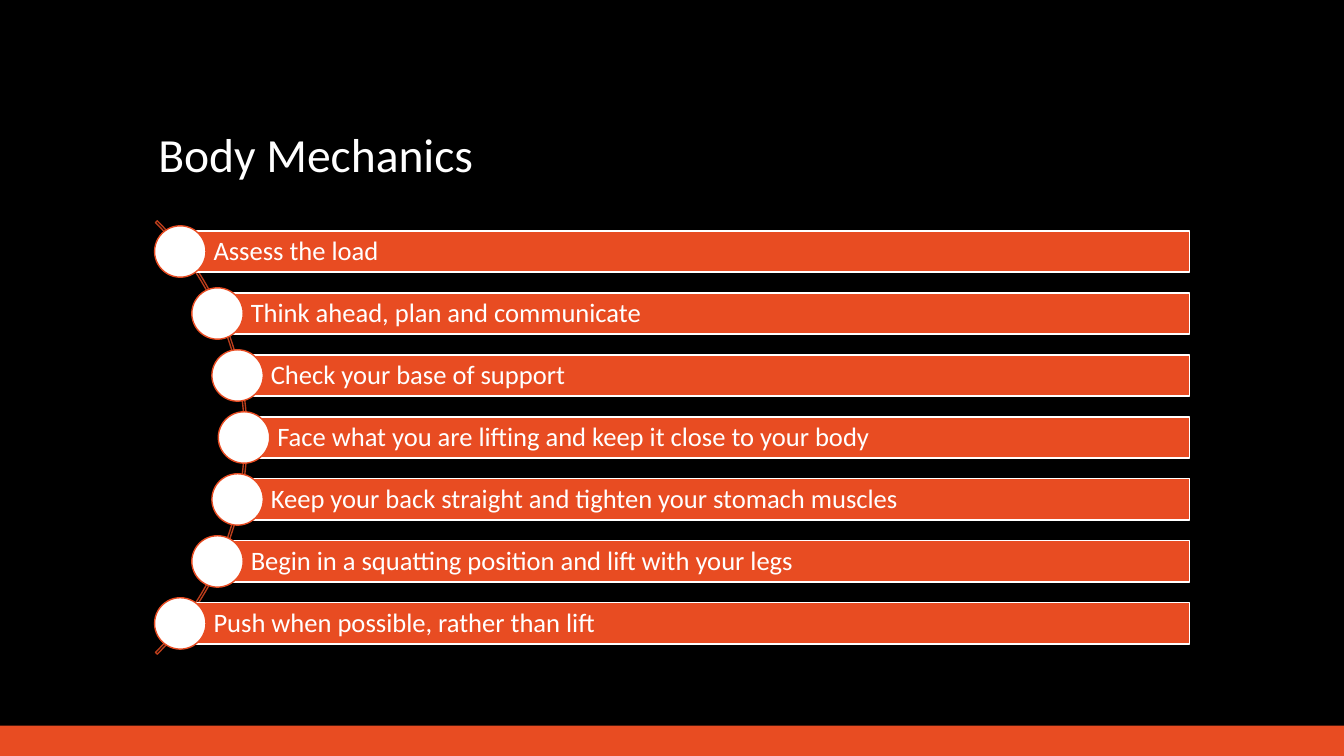
from dataclasses import dataclass
from math import sqrt

from pptx import Presentation
from pptx.dml.color import RGBColor
from pptx.enum.shapes import MSO_SHAPE
from pptx.enum.text import MSO_ANCHOR, MSO_AUTO_SIZE, PP_ALIGN
from pptx.shapes.autoshape import Shape
from pptx.slide import Slide
from pptx.text.text import TextFrame
from pptx.util import Inches, Pt

BLACK = RGBColor(0x00, 0x00, 0x00)
WHITE = RGBColor(0xFF, 0xFF, 0xFF)
ORANGE = RGBColor(0xE8, 0x4C, 0x22)
RUST = RGBColor(0xBA, 0x3D, 0x1B)

WIDTH, HEIGHT = 13.33, 7.5
MID_X, MID_Y = -0.59, 4.34  # centre of the arc
ARC = 6.08  # diameter of the arc
REACH = 3.01  # from the arc's centre to each dot
STEP = 0.615  # from row to row
RIGHT = 11.8
BAR, DOT = 0.41, 0.51

TIPS = [
    "Assess the load",
    "Think ahead, plan and communicate",
    "Check your base of support",
    "Face what you are lifting and keep it close to your body",
    "Keep your back straight and tighten your stomach muscles",
    "Begin in a squatting position and lift with your legs",
    "Push when possible, rather than lift",
]


@dataclass
class Row:
    text: str
    x: float
    y: float


def add_form(slide: Slide, kind: MSO_SHAPE, left: float, top: float,
             width: float, height: float, fill: RGBColor | None,
             line: RGBColor | None) -> Shape:
    shape = slide.shapes.add_shape(
        kind, Inches(left), Inches(top), Inches(width), Inches(height))
    shape.shadow.inherit = False
    if fill is None:
        shape.fill.background()
    else:
        shape.fill.solid()
        shape.fill.fore_color.rgb = fill
    if line is None:
        shape.line.fill.background()
    else:
        shape.line.color.rgb = line
        shape.line.width = Pt(1)
    return shape


def set_text(frame: TextFrame, text: str, size: int, anchor: MSO_ANCHOR) -> None:
    frame.text = text
    frame.word_wrap = True
    frame.auto_size = MSO_AUTO_SIZE.NONE
    frame.vertical_anchor = anchor
    para = frame.paragraphs[0]
    para.alignment = PP_ALIGN.LEFT
    para.line_spacing = 0.9
    para.font.name = "Calibri"
    para.font.size = Pt(size)
    para.font.color.rgb = WHITE


def add_row(slide: Slide, row: Row) -> None:
    bar = add_form(slide, MSO_SHAPE.RECTANGLE, row.x, row.y - BAR / 2,
                   RIGHT - row.x, BAR, ORANGE, WHITE)
    frame = bar.text_frame
    set_text(frame, row.text, 19, MSO_ANCHOR.MIDDLE)
    frame.margin_left = Inches(0.33)
    frame.margin_right = Inches(0.05)
    add_form(slide, MSO_SHAPE.OVAL, row.x - DOT / 2, row.y - DOT / 2,
             DOT, DOT, WHITE, ORANGE)


def main() -> None:
    deck = Presentation()
    deck.slide_width, deck.slide_height = Inches(WIDTH), Inches(HEIGHT)
    slide = deck.slides.add_slide(deck.slide_layouts[5])

    # Background and bottom band
    slide.background.fill.solid()
    slide.background.fill.fore_color.rgb = BLACK
    add_form(slide, MSO_SHAPE.RECTANGLE, 0, 7.2, WIDTH, 0.3, ORANGE, None)

    # Title
    title = slide.shapes.title
    title.left, title.top = Inches(1.47), Inches(0.51)
    title.width, title.height = Inches(10.4), Inches(1.35)
    set_text(title.text_frame, "Body Mechanics", 34, MSO_ANCHOR.BOTTOM)

    # Arc behind the rows, from 315 to 45 degrees
    arc = add_form(slide, MSO_SHAPE.BLOCK_ARC, MID_X - ARC / 2, MID_Y - ARC / 2,
                   ARC, ARC, None, RUST)
    for i, value in enumerate((189, 27, 0.004)):
        arc.adjustments[i] = value

    # Rows, with their dots along the arc
    for i, text in enumerate(TIPS):
        rise = (i - len(TIPS) // 2) * STEP
        x = MID_X + sqrt(REACH ** 2 - rise ** 2)
        add_row(slide, Row(text, x, MID_Y + rise))

    deck.save("out.pptx")


if __name__ == "__main__":
    main()
